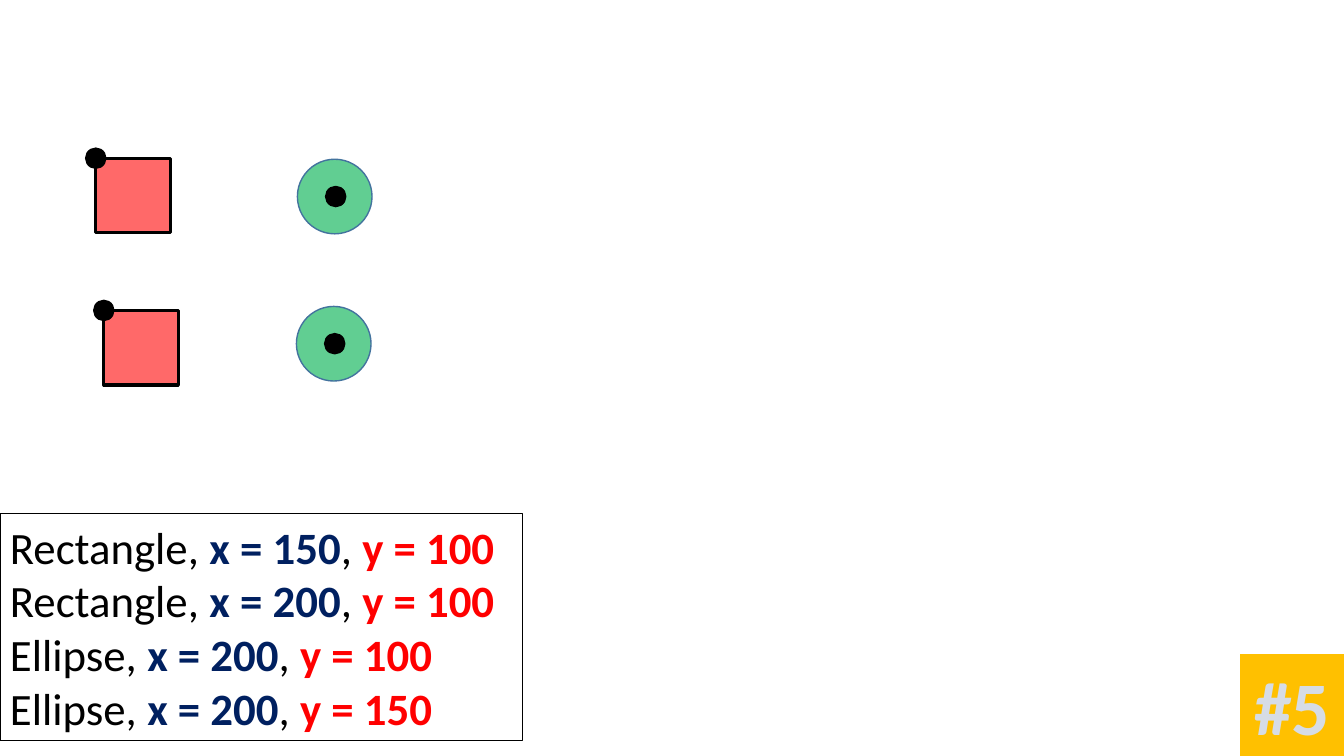
from dataclasses import dataclass

from lxml import etree
from pptx import Presentation
from pptx.dml.color import RGBColor
from pptx.enum import shapes, text
from pptx.oxml import ns
from pptx.util import Inches, Pt

RECT = shapes.MSO_SHAPE.RECTANGLE
OVAL = shapes.MSO_SHAPE.OVAL
BLACK = "000000"
SIDE = 0.74
DOT = 0.2


@dataclass
class Look:
    kind: shapes.MSO_SHAPE
    fill: str
    alpha: int
    line: str
    width: float
    shift: tuple[float, float]  # anchor dot, from the figure's corner


@dataclass
class Figure:
    look: Look
    left: float
    top: float


@dataclass
class Label:
    name: str
    x: int
    y: int


SQUARE = Look(RECT, "FF0000", 59, BLACK, 2.25, (-0.1, -0.1))
CIRCLE = Look(OVAL, "00B050", 62, "43739E", 1, (0.28, 0.27))

FIGURES = [
    Figure(SQUARE, 0.95, 1.57),
    Figure(CIRCLE, 2.95, 1.58),
    Figure(SQUARE, 1.03, 3.08),
    Figure(CIRCLE, 2.94, 3.04),
]
LABELS = [
    Label("Rectangle", 150, 100),
    Label("Rectangle", 200, 100),
    Label("Ellipse", 200, 100),
    Label("Ellipse", 200, 150),
]


def rgb(code: str) -> RGBColor:
    return RGBColor.from_string(code)


def add_shape(parent, kind, left: float, top: float, wide: float, high: float,
              fill: str = "", line: str = "", width: float = 1, alpha: int = 100):
    shape = parent.add_shape(kind, Inches(left), Inches(top), Inches(wide), Inches(high))
    shape.shadow.inherit = False
    if fill:
        shape.fill.solid()
        shape.fill.fore_color.rgb = rgb(fill)
    else:
        shape.fill.background()
    if line:
        shape.line.color.rgb = rgb(line)
        shape.line.width = Pt(width)
    else:
        shape.line.fill.background()
    if alpha < 100:
        color = shape.fill._xPr.find(ns.qn("a:solidFill"))[0]
        etree.SubElement(color, ns.qn("a:alpha"), val=str(alpha * 1000))
    return shape


def add_figure(slide, fig: Figure) -> None:
    look = fig.look
    group = slide.shapes.add_group_shape().shapes
    add_shape(group, look.kind, fig.left, fig.top, SIDE, SIDE,
              look.fill, look.line, look.width, look.alpha)
    add_shape(group, OVAL, fig.left + look.shift[0], fig.top + look.shift[1],
              DOT, DOT, BLACK, BLACK)


def set_font(font, size: float, color: str, bold: bool = False) -> None:
    font.name = "Calibri"
    font.size = Pt(size)
    font.bold = bold
    font.color.rgb = rgb(color)


def add_labels(slide) -> None:
    frame = add_shape(slide.shapes, RECT, 0, 5.09, 5.18, 2.26,
                      line=BLACK, width=0.75).text_frame
    frame.word_wrap = True
    frame.auto_size = text.MSO_AUTO_SIZE.SHAPE_TO_FIT_TEXT
    for i, label in enumerate(LABELS):
        para = frame.add_paragraph() if i else frame.paragraphs[0]
        para.alignment = text.PP_ALIGN.LEFT
        parts = [
            (f"{label.name}, ", BLACK, False),
            (f"x = {label.x}", "002060", True),
            (", ", BLACK, False),
            (f"y = {label.y}", "FF0000", True),
        ]
        for words, color, bold in parts:
            run = para.add_run()
            run.text = words
            set_font(run.font, 32, color, bold)


def add_badge(slide) -> None:
    frame = add_shape(slide.shapes, RECT, 12.3, 6.49, 1.03, 1.01, "FFC000").text_frame
    frame.word_wrap = False
    frame.auto_size = text.MSO_AUTO_SIZE.SHAPE_TO_FIT_TEXT
    para = frame.paragraphs[0]
    para.text = "#5"
    para.alignment = text.PP_ALIGN.CENTER
    set_font(para.font, 54, "D6DCE5", True)


def main() -> None:
    deck = Presentation()
    deck.slide_width = Inches(13.33)
    deck.slide_height = Inches(7.5)
    slide = deck.slides.add_slide(deck.slide_layouts[6])

    # Coordinates list
    add_labels(slide)

    # Figures with their anchor dots
    for fig in FIGURES:
        add_figure(slide, fig)

    # Slide number badge
    add_badge(slide)

    deck.save("out.pptx")


if __name__ == "__main__":
    main()
